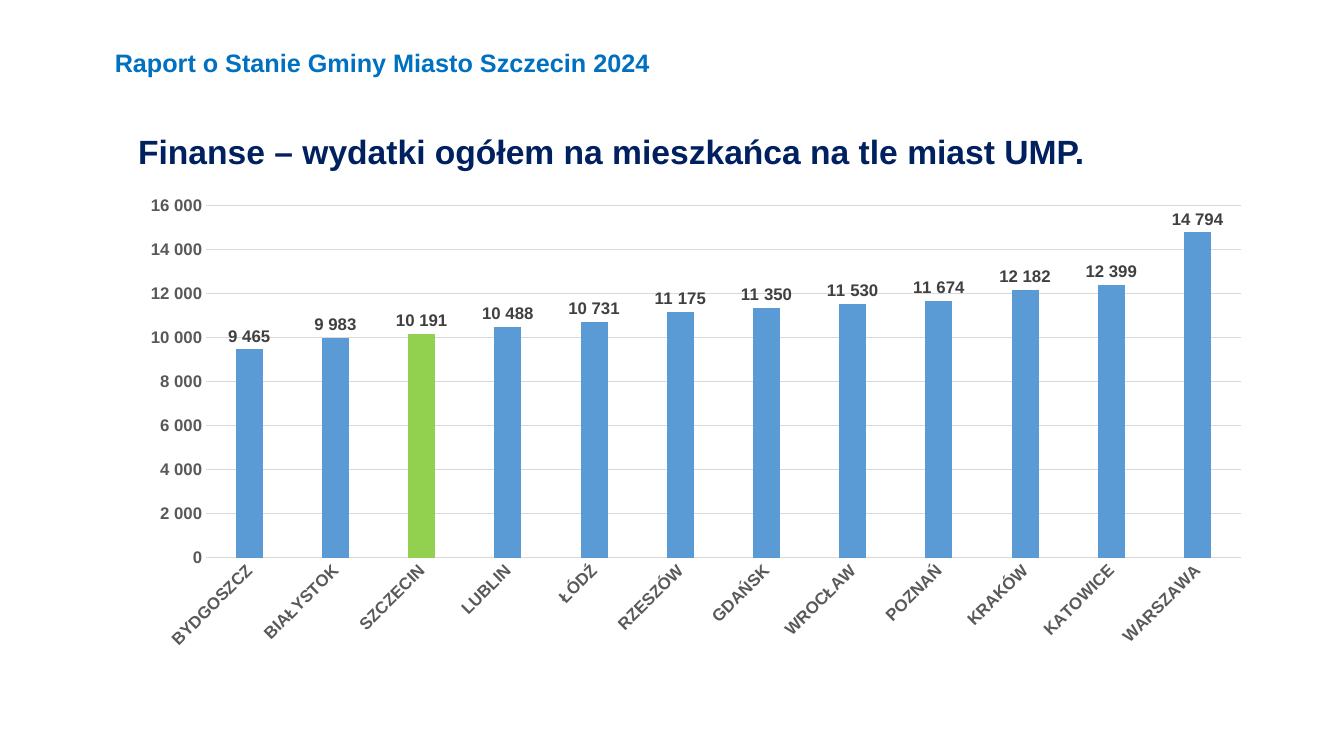
from pptx import Presentation
from pptx.chart.data import CategoryChartData
from pptx.dml.color import RGBColor
from pptx.enum.chart import XL_CHART_TYPE, XL_LABEL_POSITION, XL_TICK_MARK
from pptx.enum.text import MSO_ANCHOR, MSO_AUTO_SIZE, PP_ALIGN
from pptx.util import Inches, Pt

COLUMNS = XL_CHART_TYPE.COLUMN_CLUSTERED
OUTSIDE_END = XL_LABEL_POSITION.OUTSIDE_END
NO_TICKS = XL_TICK_MARK.NONE
LEFT = PP_ALIGN.LEFT
TOP, MIDDLE = MSO_ANCHOR.TOP, MSO_ANCHOR.MIDDLE
NO_FIT = MSO_AUTO_SIZE.NONE

NAVY = RGBColor(0x00, 0x20, 0x60)
BLUE = RGBColor(0x00, 0x70, 0xC0)
BAR_BLUE = RGBColor(0x5B, 0x9B, 0xD5)
BAR_GREEN = RGBColor(0x92, 0xD0, 0x50)
AXIS_GREY = RGBColor(0x59, 0x59, 0x59)
LABEL_GREY = RGBColor(0x40, 0x40, 0x40)
LINE_GREY = RGBColor(0xD9, 0xD9, 0xD9)

FONT = "Arial"
NUMBER_FORMAT = r"[$-415]#\ ##0"
CONTENT_LEFT = Inches(1.27)
HIGHLIGHTED_CITY = "SZCZECIN"
SPENDING = {
    "BYDGOSZCZ": 9465,
    "BIAŁYSTOK": 9983,
    "SZCZECIN": 10191,
    "LUBLIN": 10488,
    "ŁÓDŹ": 10731,
    "RZESZÓW": 11175,
    "GDAŃSK": 11350,
    "WROCŁAW": 11530,
    "POZNAŃ": 11674,
    "KRAKÓW": 12182,
    "KATOWICE": 12399,
    "WARSZAWA": 14794,
}


def set_bold(font, size, color):
    font.name = FONT
    font.size = Pt(size)
    font.bold = True
    font.color.rgb = color


def write_line(frame, text, size, color, anchor):
    """Put one bold left-aligned line in a text frame and return its paragraph."""
    frame.word_wrap = True
    frame.auto_size = NO_FIT
    frame.vertical_anchor = anchor
    paragraph = frame.paragraphs[0]
    paragraph.alignment = LEFT
    run = paragraph.add_run()
    run.text = text
    set_bold(run.font, size, color)
    return paragraph


prs = Presentation()
prs.slide_width, prs.slide_height = Inches(13.33), Inches(7.5)
slide = prs.slides.add_slide(prs.slide_layouts[5])

# Title and report header
title = slide.shapes.title
title.left, title.top = CONTENT_LEFT, Inches(1.25)
title.width, title.height = Inches(11), Inches(0.5)
heading = write_line(
    title.text_frame,
    "Finanse – wydatki ogółem na mieszkańca na tle miast UMP.", 24, NAVY, TOP)
heading.space_after = Pt(6)

report = slide.shapes.add_textbox(
    Inches(1.04), Inches(0.31), Inches(7.34), Inches(0.66))
report_line = write_line(
    report.text_frame, "Raport o Stanie Gminy Miasto Szczecin 2024", 18, BLUE, MIDDLE)
report_line.line_spacing = 0.9

# Spending per resident, by city
data = CategoryChartData(number_format=NUMBER_FORMAT)
data.categories = list(SPENDING)
data.add_series("Wydatki na mieszkańca", list(SPENDING.values()))
chart = slide.shapes.add_chart(
    COLUMNS, CONTENT_LEFT, Inches(1.86), Inches(11.26), Inches(4.67), data).chart
chart.has_legend = False
chart.has_title = False
chart.font.name = "Calibri"
chart.font.size = Pt(10)

cities, amounts = chart.category_axis, chart.value_axis
for axis in (cities, amounts):
    axis.major_tick_mark = axis.minor_tick_mark = NO_TICKS
    set_bold(axis.tick_labels.font, 12, AXIS_GREY)
cities.tick_labels.font._element.getparent().getparent().getparent().bodyPr.set(
    "rot", "-2700000")
amounts.minimum_scale, amounts.maximum_scale, amounts.major_unit = 0, 16000, 2000
amounts.tick_labels.number_format = NUMBER_FORMAT
amounts.tick_labels.number_format_is_linked = False
amounts.format.line.fill.background()
for line in (cities.format.line, amounts.major_gridlines.format.line):
    line.color.rgb = LINE_GREY
    line.width = Pt(0.75)

plot = chart.plots[0]
plot.gap_width, plot.overlap = 219, -27
plot.vary_by_categories = False
bars = plot.series[0]
bars.invert_if_negative = False
highlight = bars.points[list(SPENDING).index(HIGHLIGHTED_CITY)]
for part, color in ((bars, BAR_BLUE), (highlight, BAR_GREEN)):
    part.format.fill.solid()
    part.format.fill.fore_color.rgb = color

labels = bars.data_labels
labels.show_value = True
labels.position = OUTSIDE_END
labels.number_format = NUMBER_FORMAT
labels.number_format_is_linked = False
set_bold(labels.font, 12, LABEL_GREY)

prs.save("out.pptx")
